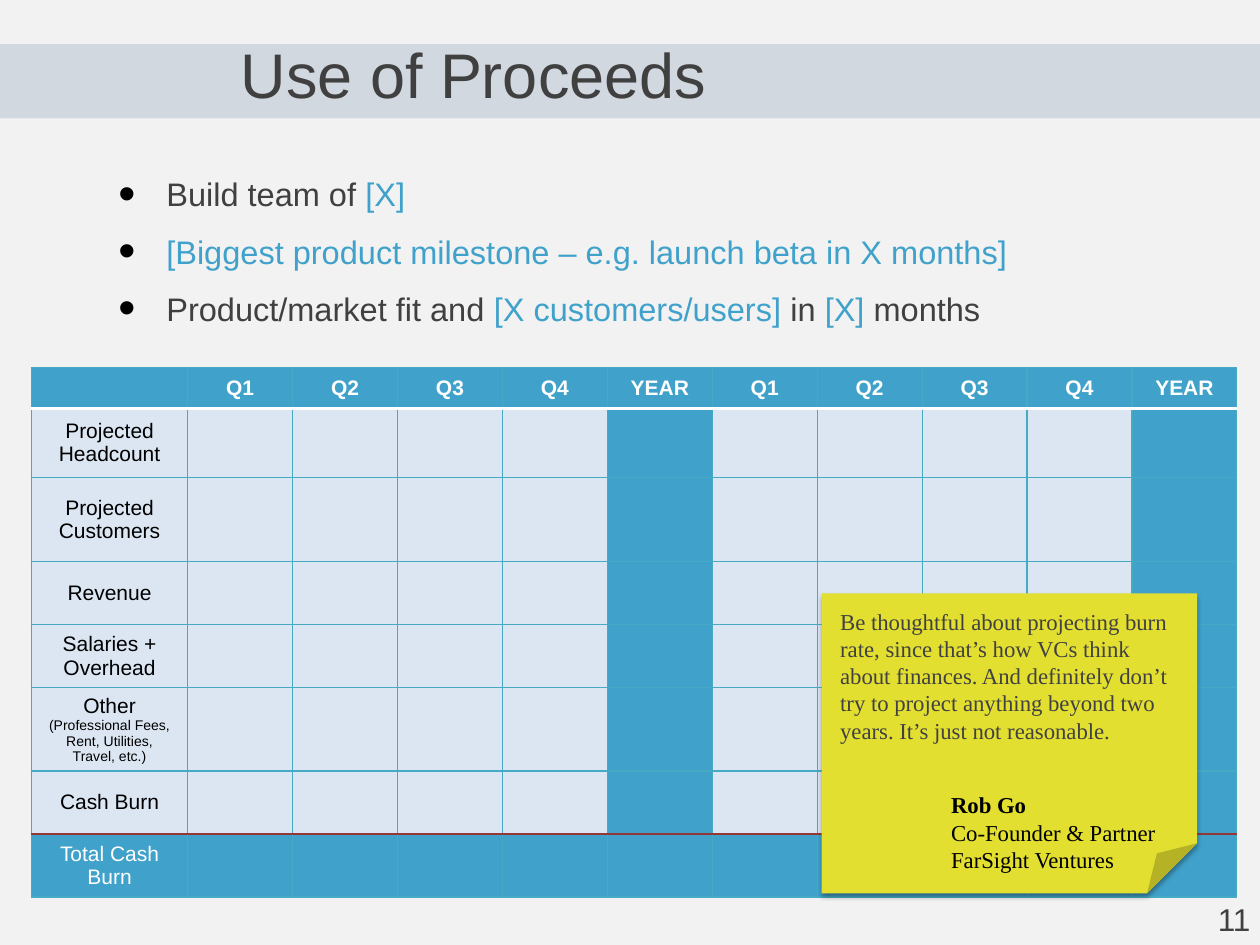
from lxml.etree import SubElement
from pptx import Presentation
from pptx.dml.color import RGBColor
from pptx.enum.shapes import MSO_SHAPE
from pptx.enum.text import MSO_ANCHOR, PP_ALIGN
from pptx.oxml.ns import qn
from pptx.util import Inches, Pt

BLUE, PALE, RULE, INK = "40A2CB", "DCE6F2", "46AAC5", "404040"


def color(hex_text):
    return RGBColor.from_string(hex_text)


def child(parent, tag, **attributes):
    return SubElement(parent, qn(tag), {key: str(value) for key, value in attributes.items()})


def write(paragraph, *parts, size=12, font="Arial", ink=INK, bold=False,
          align=PP_ALIGN.LEFT, spacing=None, before=None):
    paragraph.alignment = align
    if spacing:
        paragraph.line_spacing = spacing
    if before is not None:
        paragraph.space_before = Pt(before)
    for part in parts:
        text, changes = part if isinstance(part, tuple) else (part, {})
        run = paragraph.add_run()
        run.text = text
        run.font.name = font
        run.font.size = Pt(changes.get("size", size))
        run.font.bold = bold
        run.font.color.rgb = color(changes.get("ink", ink))


class Deck:
    def __init__(self):
        self.file = Presentation()
        self.file.slide_width, self.file.slide_height = Inches(10), Inches(7.5)
        self.slide = self.file.slides.add_slide(self.file.slide_layouts[1])
        self.shapes = self.slide.shapes
        background = self.slide.background.fill
        background.solid()
        background.fore_color.rgb = color("F2F2F2")

    def across(self, percent):
        return round(self.file.slide_width * percent / 100)

    def down(self, percent):
        return round(self.file.slide_height * percent / 100)

    def area(self, left, top, width, height):
        return self.across(left), self.down(top), self.across(width), self.down(height)

    def place(self, placeholder, area):
        (placeholder.left, placeholder.top,
         placeholder.width, placeholder.height) = self.area(*area)
        return placeholder.text_frame

    def title(self, text, area):
        frame = self.place(self.shapes.title, area)
        frame.vertical_anchor = MSO_ANCHOR.BOTTOM
        write(frame.paragraphs[0], text, size=36, spacing=0.8)

    def bullets(self, items, area):
        frame = self.place(self.slide.placeholders[1], area)
        for index, parts in enumerate(items):
            paragraph = frame.paragraphs[0] if index == 0 else frame.add_paragraph()
            layout = paragraph._p.get_or_add_pPr()
            layout.set("marL", str(Inches(0.38)))
            layout.set("indent", str(-Inches(0.38)))
            child(child(layout, "a:buClr"), "a:srgbClr", val="000000")
            child(layout, "a:buSzPct", val=150000)
            child(layout, "a:buFont", typeface="Arial")
            child(layout, "a:buChar", char="•")
            write(paragraph, *parts, size=18.6, spacing=1.3, before=3.7 if index else 0)

    def shape(self, kind, area, fill, alpha=None, parent=None):
        item = (parent or self.shapes).add_shape(kind, *self.area(*area))
        item.shadow.inherit = False
        item.line.fill.background()
        item.fill.solid()
        item.fill.fore_color.rgb = color(fill)
        if alpha:
            tone = item._element.spPr.find(qn("a:solidFill"))[0]
            child(tone, "a:alpha", val=alpha * 1000)
        return item

    def band(self, area, fill, alpha):
        stripe = self.shape(MSO_SHAPE.RECTANGLE, area, fill, alpha)
        self.shapes._spTree.insert(2, stripe._element)

    def text(self, lines, area, parent=None, wrap=True, inset=0.1, **style):
        frame = (parent or self.shapes).add_textbox(*self.area(*area)).text_frame
        frame.word_wrap = wrap
        frame.margin_left = frame.margin_right = Inches(inset)
        for index, (line, changes) in enumerate(lines):
            paragraph = frame.paragraphs[0] if index == 0 else frame.add_paragraph()
            write(paragraph, line, **style, **changes)

    def sticky(self, advice, signature):
        note = self.shapes.add_group_shape().shapes
        sheet = self.shape(MSO_SHAPE.FOLDED_CORNER, (65.2, 62.8, 29.8, 31.73), "E3DF30", parent=note)
        shadow = child(sheet._element.spPr.find(qn("a:effectLst")), "a:outerShdw",
                       blurRad=Pt(3.1), dist=Pt(1.8), dir=5400000, rotWithShape=0)
        child(child(shadow, "a:srgbClr", val="000000"), "a:alpha", val=35000)
        serif = {"parent": note, "size": 13, "font": "Times New Roman"}
        self.text(signature, (74.5, 83.07, 18.6, 10.13), wrap=False, ink="000000", **serif)
        self.text([(advice, {})], (65.7, 63.6, 29, 15.87), ink="414141", **serif)

    def cell(self, cell, parts, fill, ink, bold, edges):
        cell.margin_top = cell.margin_bottom = 0
        cell.vertical_anchor = MSO_ANCHOR.MIDDLE
        if parts:
            write(cell.text_frame.paragraphs[0], *parts, ink=ink, bold=bold,
                  align=PP_ALIGN.CENTER)
        borders = cell._tc.get_or_add_tcPr()
        for side, (hex_text, width) in zip("LRTB", edges):
            line = child(borders, f"a:ln{side}", w=Pt(width))
            child(child(line, "a:solidFill"), "a:srgbClr", val=hex_text)
        cell.fill.solid()
        cell.fill.fore_color.rgb = color(fill)

    def budget(self, heads, labels, heights, area):
        rows, columns = len(labels) + 1, len(heads)
        table = self.shapes.add_table(rows, columns, *self.area(*area)).table
        for index, column in enumerate(table.columns):
            column.width = self.across(8.33 if index else 12.4)
        thin = (RULE, 0.75)
        rules = {1: ("FFFFFF", 2), rows - 1: ("953735", 1)}
        for r, height in enumerate(heights):
            table.rows[r].height = self.down(height)
            solid = r in (0, rows - 1)
            edges = thin, thin, rules.get(r, thin), rules.get(r + 1, thin)
            for c, head in enumerate(heads):
                if r == 0:
                    parts = [head] if head else []
                else:
                    parts = labels[r - 1] if c == 0 else []
                fill = BLUE if solid or head == "YEAR" else PALE
                self.cell(table.cell(r, c), parts, fill,
                          "FFFFFF" if solid else "000000", r == 0, edges)


def main():
    deck = Deck()
    deck.band((0, 4.67, 100, 7.87), "1F497D", 15)
    deck.title("Use of Proceeds", (18.1, 4.5, 67, 7.87))

    accent = {"ink": BLUE}
    deck.bullets([
        ["Build team of ", ("[X]", accent)],
        [("[Biggest product milestone – e.g. launch beta in X months]", accent)],
        ["Product/market fit and ", ("[X customers/users]", accent), " in ",
         ("[X]", accent), " months"],
    ], (8.4, 16.53, 80.1, 20))

    year = ["Q1", "Q2", "Q3", "Q4", "YEAR"]
    deck.budget([""] + year * 2, [
        ["Projected Headcount"],
        ["Projected Customers"],
        ["Revenue"],
        ["Salaries + Overhead"],
        ["Other ", ("(Professional Fees, Rent, Utilities, Travel, etc.)", {"size": 8})],
        ["Cash Burn"],
        ["Total Cash Burn"],
    ], [4.27, 7.33, 8.93, 6.67, 6.67, 8.8, 6.67, 6.67], (2.5, 38.93, 95.7, 56))

    deck.sticky(
        "Be thoughtful about projecting burn rate, since that’s how VCs think about "
        "finances. And definitely don’t try to project anything beyond two years. "
        "It’s just not reasonable.",
        [("Rob Go", {"bold": True}), ("Co-Founder & Partner", {}), ("FarSight Ventures", {})])
    deck.text([("11", {})], (96.65, 94.53, 3.35, 5.33), wrap=False, inset=0, size=18)
    deck.file.save("out.pptx")


if __name__ == "__main__":
    main()
